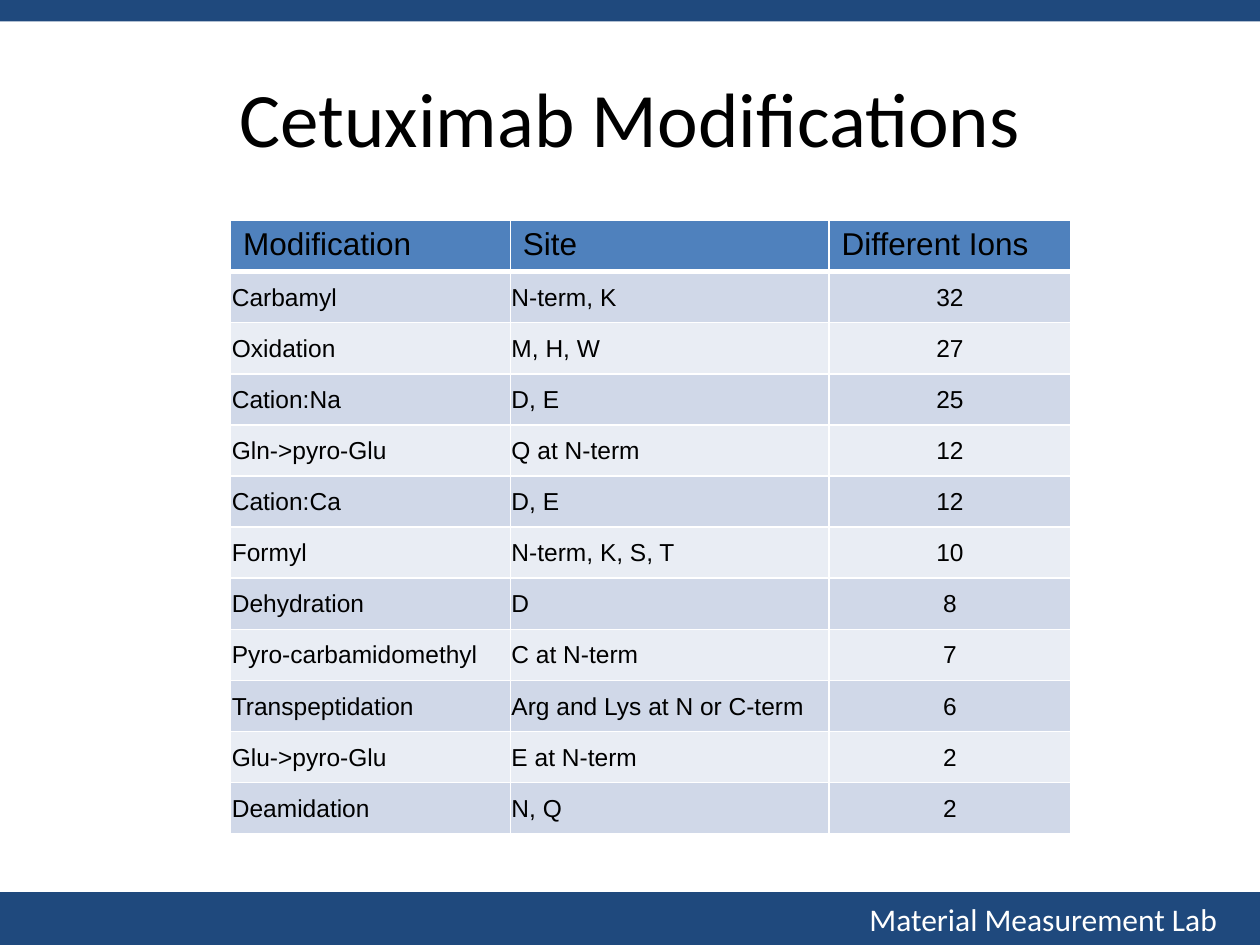
"""Build the Cetuximab modifications slide with its table of ion counts."""
from dataclasses import dataclass

from lxml import etree
from pptx import Presentation
from pptx import util as u
from pptx.dml.color import RGBColor
from pptx.enum import shapes, text
from pptx.oxml.ns import qn

TITLE = "Cetuximab Modifications"
FOOTER = "Material Measurement Lab"
HEADINGS = ("Modification", "Site", "Different Ions")
MODIFICATIONS = [
    ("Carbamyl", "N-term, K", 32),
    ("Oxidation", "M, H, W", 27),
    ("Cation:Na", "D, E", 25),
    ("Gln->pyro-Glu", "Q at N-term", 12),
    ("Cation:Ca", "D, E", 12),
    ("Formyl", "N-term, K, S, T", 10),
    ("Dehydration", "D", 8),
    ("Pyro-carbamidomethyl", "C at N-term", 7),
    ("Transpeptidation", "Arg and Lys at N or C-term", 6),
    ("Glu->pyro-Glu", "E at N-term", 2),
    ("Deamidation", "N, Q", 2),
]
SLIDE_SIZE = (10, 7.5)
TITLE_BOX = (0.5, 0.3, 9, 1.25)
TABLE_BOX = (1.83, 1.75, 6.67, 4.87)
COLUMN_WIDTHS = (2.22, 2.53, 1.92)
TOP_BAND, FOOTER_BAND = 0.17, 0.42


@dataclass(frozen=True)
class Theme:
    """Colours, fonts and type sizes of the slide."""
    band: str = "1F497D"
    header: str = "4F81BD"
    stripes: tuple = ("D0D8E8", "E9EDF4")
    ink: str = "000000"
    paper: str = "FFFFFF"
    heading_font: str = "Calibri"
    table_font: str = "Arial"
    title_size: int = 44
    label_size: int = 18
    cell_size: int = 14
    thin: int = 1
    thick: int = 3


THEME = Theme()


def inches(values):
    """Convert numbers to lengths."""
    return [u.Inches(value) for value in values]


def paint(fill, color):
    """Give a fill one solid colour."""
    fill.solid()
    fill.fore_color.rgb = RGBColor.from_string(color)


def write(frame, words, font, size, color, alignment):
    """Write one formatted run into the first paragraph."""
    paragraph = frame.paragraphs[0]
    paragraph.alignment = alignment
    run = paragraph.add_run()
    run.text = words
    run.font.name, run.font.size = font, u.Pt(size)
    run.font.color.rgb = RGBColor.from_string(color)


def add_band(slide, top, height):
    """Add a full-width coloured band."""
    band = slide.shapes.add_shape(
        shapes.MSO_SHAPE.RECTANGLE, *inches((0, top, SLIDE_SIZE[0], height)))
    band.shadow.inherit = False
    paint(band.fill, THEME.band)
    band.line.fill.background()
    return band


def set_borders(cell, top, bottom):
    """Draw the four cell borders, with given top and bottom widths."""
    properties = cell._tc.get_or_add_tcPr()
    widths = {"lnL": THEME.thin, "lnR": THEME.thin, "lnT": top, "lnB": bottom}
    for side, width in widths.items():
        line = etree.SubElement(properties, qn(f"a:{side}"), w=str(u.Pt(width)))
        fill = etree.SubElement(line, qn("a:solidFill"))
        etree.SubElement(fill, qn("a:srgbClr"), val=THEME.paper)


def add_modification_table(slide):
    """Add the striped table of modifications."""
    rows = [HEADINGS, *MODIFICATIONS]
    table = slide.shapes.add_table(
        len(rows), len(HEADINGS), *inches(TABLE_BOX)).table
    for column, width in zip(table.columns, COLUMN_WIDTHS):
        column.width = u.Inches(width)
    for row_index, values in enumerate(rows):
        is_header = row_index == 0
        color = THEME.header if is_header else THEME.stripes[(row_index - 1) % 2]
        top = THEME.thick if row_index == 1 else THEME.thin
        bottom = THEME.thick if is_header else THEME.thin
        size = THEME.label_size if is_header else THEME.cell_size
        for column_index, value in enumerate(values):
            cell = table.cell(row_index, column_index)
            set_borders(cell, top, bottom)
            paint(cell.fill, color)
            if not is_header:
                cell.vertical_anchor = text.MSO_ANCHOR.MIDDLE
                cell.margin_left = cell.margin_right = cell.margin_top = u.Inches(0.01)
                cell.margin_bottom = 0
            alignment = text.PP_ALIGN.CENTER if isinstance(value, int) else text.PP_ALIGN.LEFT
            write(cell.text_frame, str(value), THEME.table_font, size,
                  THEME.ink, alignment)


def main():
    """Assemble and save the slide."""
    presentation = Presentation()
    presentation.slide_width, presentation.slide_height = inches(SLIDE_SIZE)
    slide = presentation.slides.add_slide(presentation.slide_layouts[5])
    paint(slide.background.fill, THEME.paper)

    add_band(slide, 0, TOP_BAND)
    footer = add_band(slide, SLIDE_SIZE[1] - FOOTER_BAND, FOOTER_BAND).text_frame
    footer.margin_right = u.Inches(0.34)
    footer.vertical_anchor = text.MSO_ANCHOR.MIDDLE
    write(footer, FOOTER, THEME.heading_font, THEME.label_size,
          THEME.paper, text.PP_ALIGN.RIGHT)

    title = slide.shapes.title
    title.left, title.top, title.width, title.height = inches(TITLE_BOX)
    title.text_frame.vertical_anchor = text.MSO_ANCHOR.MIDDLE
    write(title.text_frame, TITLE, THEME.heading_font, THEME.title_size,
          THEME.ink, text.PP_ALIGN.CENTER)

    add_modification_table(slide)
    presentation.save("out.pptx")


if __name__ == "__main__":
    main()
